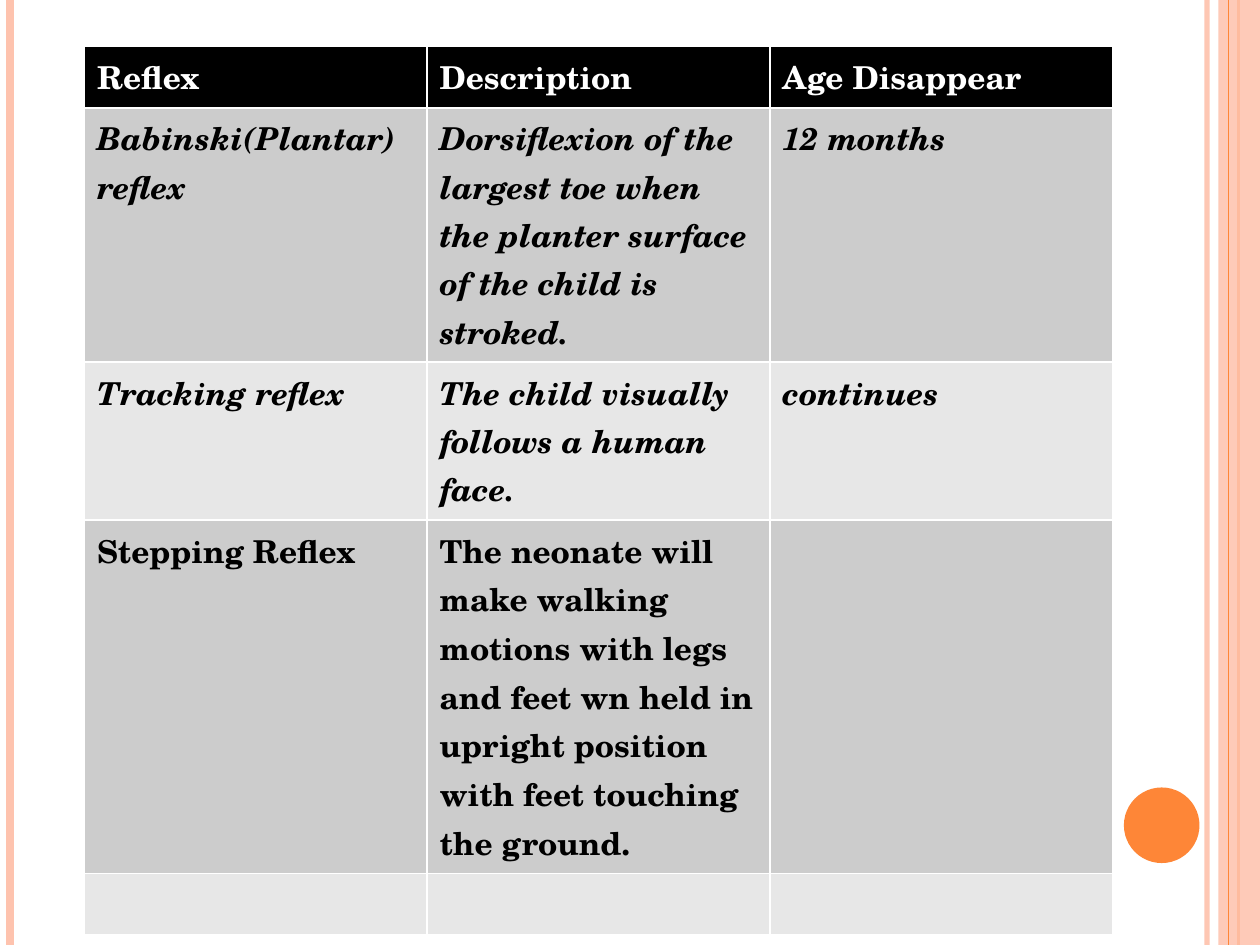
from pptx import Presentation
from pptx.dml.color import RGBColor
from pptx.enum.shapes import MSO_CONNECTOR, MSO_SHAPE
from pptx.oxml.ns import qn
from pptx.util import Inches, Pt
from lxml.etree import SubElement

FONT = "TeX Gyre Schola"
HEX = {"peach": "FEC3AE", "orange": "FE8637", "black": "000000",
       "white": "FFFFFF", "dark": "CCCCCC", "light": "E7E7E7"}
ROWS = [
    ("Reflex", "Description", "Age Disappear"),
    ("Babinski(Plantar) reflex",
     "Dorsiflexion of the largest toe when the planter surface of the child is stroked.",
     "12 months"),
    ("Tracking reflex", "The child visually follows a human face.", "continues"),
    ("Stepping Reflex",
     "The neonate will make walking motions with legs and feet wn held in "
     "upright position with feet touching the ground.", ""),
    ("", "", ""),
]
ITALIC = (1, 2)
# x, colour, width in points, opacity in percent
STRIPES = [(9.58, "peach", 3, 93), (0.08, "peach", 4.5, 100), (9.83, "orange", 1.5, 100)]
EDGE = (9.75, "orange", 0.75, 100)


def color(name):
    return RGBColor.from_string(HEX[name])


def fade(part, pct):
    """Set the opacity of the solid colour in a shape or line."""
    if pct < 100:
        tint = next(part.iter(qn("a:srgbClr")))
        SubElement(tint, qn("a:alpha")).set("val", str(pct * 1000))


def stripe(x, name, width, pct):
    line = slide.shapes.add_connector(
        MSO_CONNECTOR.STRAIGHT, Inches(x), 0, Inches(x), Inches(7.5))
    line.line.color.rgb = color(name)
    line.line.width = Pt(width)
    props = line._element.spPr
    fade(props, pct)
    SubElement(props, qn("a:effectLst"))


def block(kind, box, name, pct=100):
    shape = slide.shapes.add_shape(kind, *map(Inches, box))
    shape.shadow.inherit = False
    shape.fill.solid()
    shape.fill.fore_color.rgb = color(name)
    shape.line.fill.background()
    fade(shape._element.spPr, pct)


def fill_cell(cell, text, row):
    cell.fill.solid()
    cell.fill.fore_color.rgb = color("black" if row == 0 else ("light", "dark")[row % 2])
    cell.text_frame.text = text
    para = cell.text_frame.paragraphs[0]
    for run in para.runs:
        font = run.font
        font.name, font.size, font.bold = FONT, Pt(18), True
        font.italic = row in ITALIC
        font.color.rgb = color("black" if row else "white")
    if not text:  # an empty cell keeps the height of one text line
        end = SubElement(para._p, qn("a:endParaRPr"), sz="1800", b="1")
        SubElement(end, qn("a:latin"), typeface=FONT)


prs = Presentation()
prs.slide_width, prs.slide_height = Inches(10), Inches(7.5)
slide = prs.slides.add_slide(prs.slide_layouts[6])

for item in STRIPES:
    stripe(*item)
block(MSO_SHAPE.RECTANGLE, (9.67, 0, 0.33, 7.5), "peach", 87)
stripe(*EDGE)
block(MSO_SHAPE.OVAL, (8.92, 6.25, 0.6, 0.6), "orange")

height = 0.41
table = slide.shapes.add_table(
    len(ROWS), len(ROWS[0]), Inches(0.67), Inches(0.37),
    Inches(8.16), Inches(height * len(ROWS))).table
for r, texts in enumerate(ROWS):
    for c, text in enumerate(texts):
        fill_cell(table.cell(r, c), text, r)

prs.save("out.pptx")
